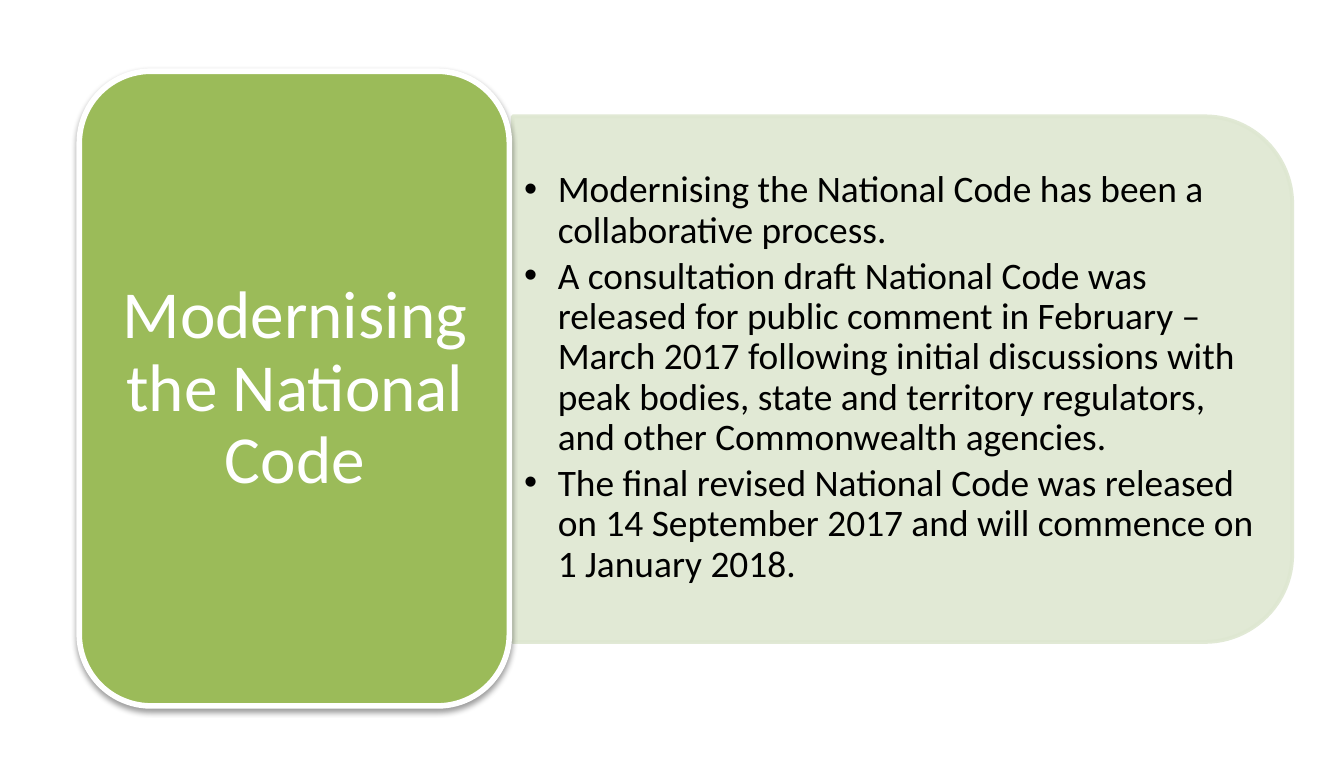
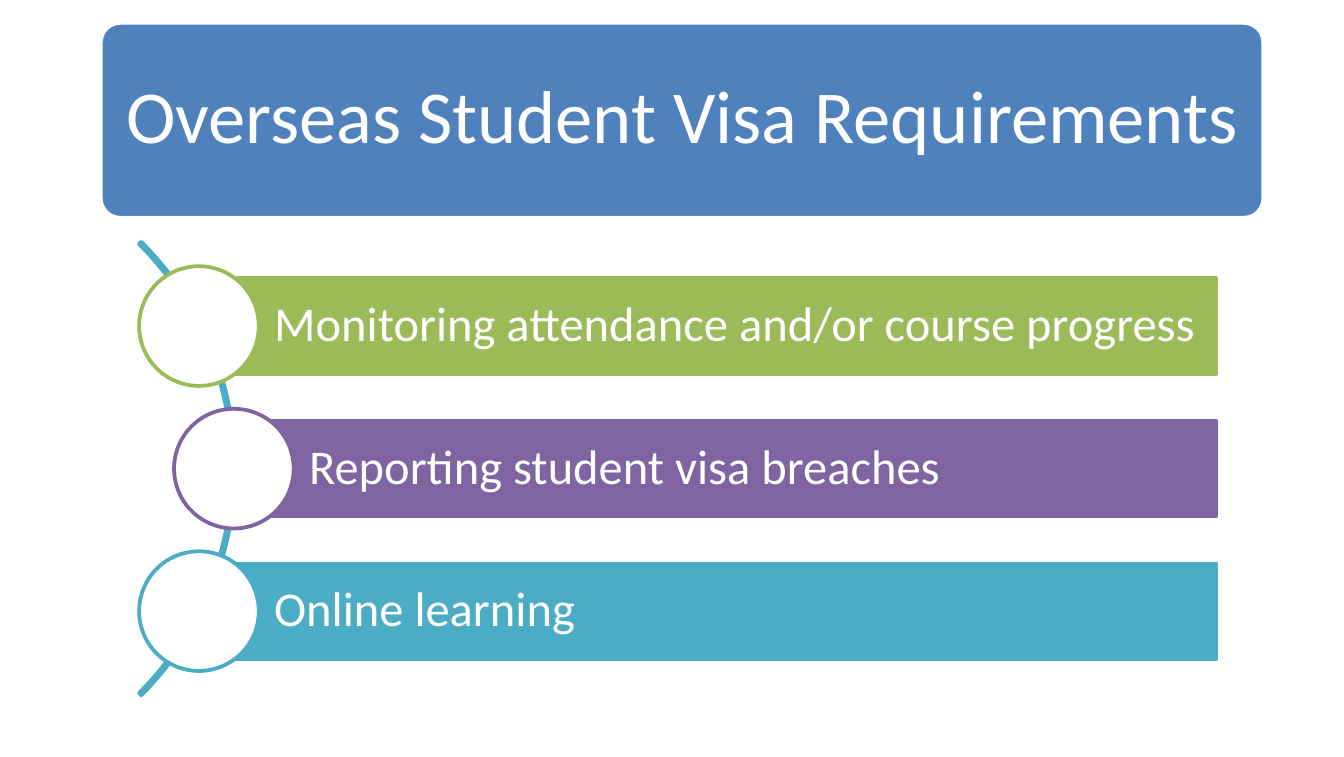
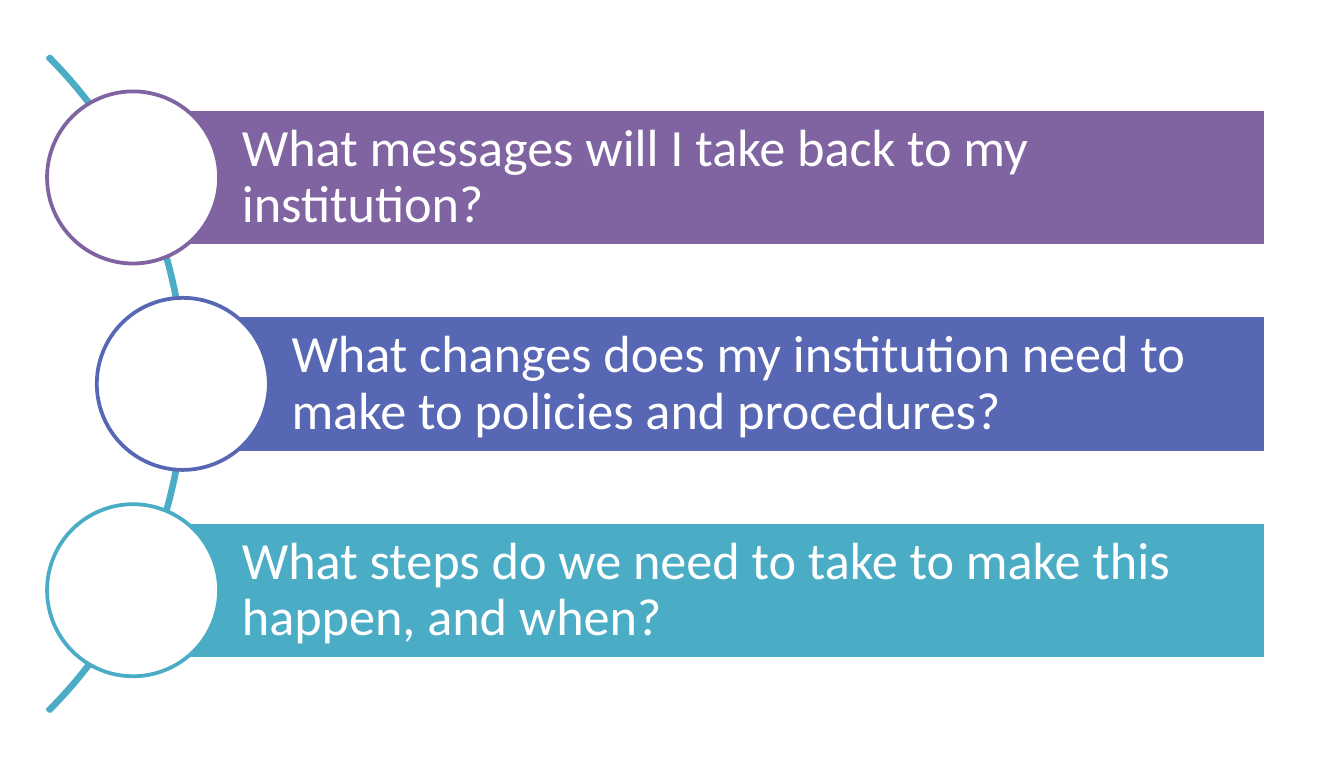
import pptx
import pptx.dml.color
import pptx.enum.shapes
import pptx.enum.text
import pptx.oxml
import pptx.oxml.ns
import pptx.util
from pptx.util import Inches

SHAPE = pptx.enum.shapes.MSO_SHAPE
ALIGN = pptx.enum.text.PP_ALIGN
NS = pptx.oxml.ns.nsdecls("a")
COLORS = {
    "white": "FFFFFF", "black": "000000", "green": "9BBB59", "pale": "DEE7D1",
    "blue": "4F81BD", "purple": "8064A2", "indigo": "5767B4", "aqua": "4BACC6",
}


def rgb(name):
    return pptx.dml.color.RGBColor.from_string(COLORS[name])


def set_all(obj, values):
    for name, value in values.items():
        setattr(obj, name, value)


class Deck:
    def __init__(self, width, height):
        self.prs = pptx.Presentation()
        set_all(self.prs, {"slide_width": Inches(width), "slide_height": Inches(height)})
        self.s = None

    def slide(self, layout):
        self.s = self.prs.slides.add_slide(self.prs.slide_layouts[layout])

    def shape(self, kind, at, fill, line, width=2, adj=()):
        sp = self.s.shapes.add_shape(kind, *map(Inches, at))
        sp.shadow.inherit = False
        for i, value in enumerate(adj):
            sp.adjustments[i] = value
        if fill:
            sp.fill.solid()
            sp.fill.fore_color.rgb = rgb(fill)
        else:
            sp.fill.background()
        sp.line.color.rgb = rgb(line)
        sp.line.width = pptx.util.Pt(width)
        return sp

    def fade(self, sp, percent):
        """Make the fill and line of a shape partly transparent."""
        for clr in sp._element.spPr.iter(pptx.oxml.ns.qn("a:srgbClr")):
            clr.append(pptx.oxml.parse_xml(f'<a:alpha {NS} val="{percent * 1000}"/>'))

    def drop_shadow(self, sp):
        sp._element.spPr.find(pptx.oxml.ns.qn("a:effectLst")).append(pptx.oxml.parse_xml(
            f'<a:outerShdw {NS} blurRad="{pptx.util.Pt(3.1)}" dist="{pptx.util.Pt(1.6)}" '
            'dir="5400000" rotWithShape="0">'
            '<a:srgbClr val="000000"><a:alpha val="38000"/></a:srgbClr></a:outerShdw>'))

    def text(self, sp, lines, size, insets, color="white", align=ALIGN.LEFT, bullets=False):
        tf = sp.text_frame
        sides = ("margin_left", "margin_top", "margin_right", "margin_bottom")
        set_all(tf, dict(zip(sides, map(Inches, insets))))
        set_all(tf, {"word_wrap": True, "auto_size": pptx.enum.text.MSO_AUTO_SIZE.NONE,
                     "vertical_anchor": pptx.enum.text.MSO_ANCHOR.MIDDLE})
        for i, line in enumerate(lines):
            p = tf.add_paragraph() if i else tf.paragraphs[0]
            set_all(p, {"alignment": align, "line_spacing": 0.9,
                        "space_before": pptx.util.Pt(0)})
            if bullets:
                p.space_after = pptx.util.Pt(3)
                pPr = p._p.get_or_add_pPr()
                pPr.set("marL", str(Inches(0.25)))
                pPr.set("indent", str(Inches(-0.25)))
                pPr.append(pptx.oxml.parse_xml(f'<a:buChar {NS} char="•"/>'))
            r = p.add_run()
            r.text = line
            set_all(r.font, {"name": "Calibri", "size": pptx.util.Pt(size)})
            r.font.color.rgb = rgb(color)

    def placeholder(self, idx, at, lines, size, insets, **style):
        """Fill a placeholder and bring it in front of the panels."""
        sp = self.s.placeholders[idx]
        set_all(sp, dict(zip(("left", "top", "width", "height"), map(Inches, at))))
        self.text(sp, lines, size, insets, **style)
        self.s.shapes._spTree.append(sp._element)

    def arc_list(self, items, x, right, first, last, height, circle, shift,
                 arc, size, insets, outlined):
        """Bars with circles along an arc; the middle bar is shifted right."""
        arc_left, arc_size, thickness = arc
        middle = (first + last + height) / 2
        self.shape(SHAPE.BLOCK_ARC, (arc_left, middle - arc_size / 2, arc_size, arc_size),
                   None, "aqua", adj=(189, 27, thickness))
        pitch = (last - first) / (len(items) - 1)
        for i, (label, color) in enumerate(items):
            left = x + shift * (i % 2)
            top = first + i * pitch
            bar = self.shape(SHAPE.RECTANGLE, (left, top, right - left, height),
                             color, "white" if outlined else color)
            self.text(bar, [label], size, insets)
            self.shape(SHAPE.OVAL, (left - circle / 2, top + (height - circle) / 2,
                                    circle, circle), "white", color)


def main():
    deck = Deck(10, 5.63)

    deck.slide(1)
    panel = deck.shape(SHAPE.ROUND_2_SAME_RECTANGLE, (4.76, -0.08, 3.91, 5.8), "pale", "pale")
    panel.rotation = 90
    deck.fade(panel, 90)
    card = deck.shape(SHAPE.ROUNDED_RECTANGLE, (0.59, 0.53, 3.2, 4.72), "green", "white", 3)
    deck.drop_shadow(card)
    deck.placeholder(0, (0.75, 0.69, 2.89, 4.41), ["Modernising the National Code"], 36,
                     (0.15, 0.07, 0.15, 0.07), align=ALIGN.CENTER)
    deck.placeholder(1, (3.82, 1.05, 5.61, 3.52), [
        "Modernising the National Code has been a collaborative process.",
        "A consultation draft National Code was released for public comment in February – "
        "March 2017 following initial discussions with peak bodies, state and territory "
        "regulators, and other Commonwealth agencies.",
        "The final revised National Code was released on 14 September 2017 and will "
        "commence on 1 January 2018.",
    ], 20, (0.08, 0.04, 0.08, 0.04), color="black", bullets=True)

    deck.slide(5)
    deck.shape(SHAPE.ROUNDED_RECTANGLE, (0.75, 0.17, 8.65, 1.45), "blue", "white", adj=(0.1,))
    deck.placeholder(0, (0.79, 0.21, 8.57, 1.36), ["Overseas Student Visa Requirements"], 40,
                     (0.08, 0.06, 0.08, 0.06), align=ALIGN.CENTER)
    deck.arc_list([
        ("Monitoring attendance and/or course progress", "green"),
        ("Reporting student visa breaches", "purple"),
        ("Online learning", "aqua"),
    ], x=1.48, right=9.05, first=2.07, last=4.19, height=0.71, circle=0.89, shift=0.26,
        arc=(-3.02, 4.77, 0.005), size=26, insets=(0.56, 0.07, 0.07, 0.07), outlined=False)

    deck.slide(6)
    deck.arc_list([
        ("What messages will I take back to my institution?", "purple"),
        ("What changes does my institution need to make to policies and procedures?", "indigo"),
        ("What steps do we need to take to make this happen, and when?", "aqua"),
    ], x=0.99, right=9.42, first=0.81, last=3.88, height=1.02, circle=1.28, shift=0.37,
        arc=(-5.51, 6.89, 0.003), size=28, insets=(0.81, 0.08, 0.08, 0.08), outlined=True)

    deck.prs.save("out.pptx")


if __name__ == "__main__":
    main()
